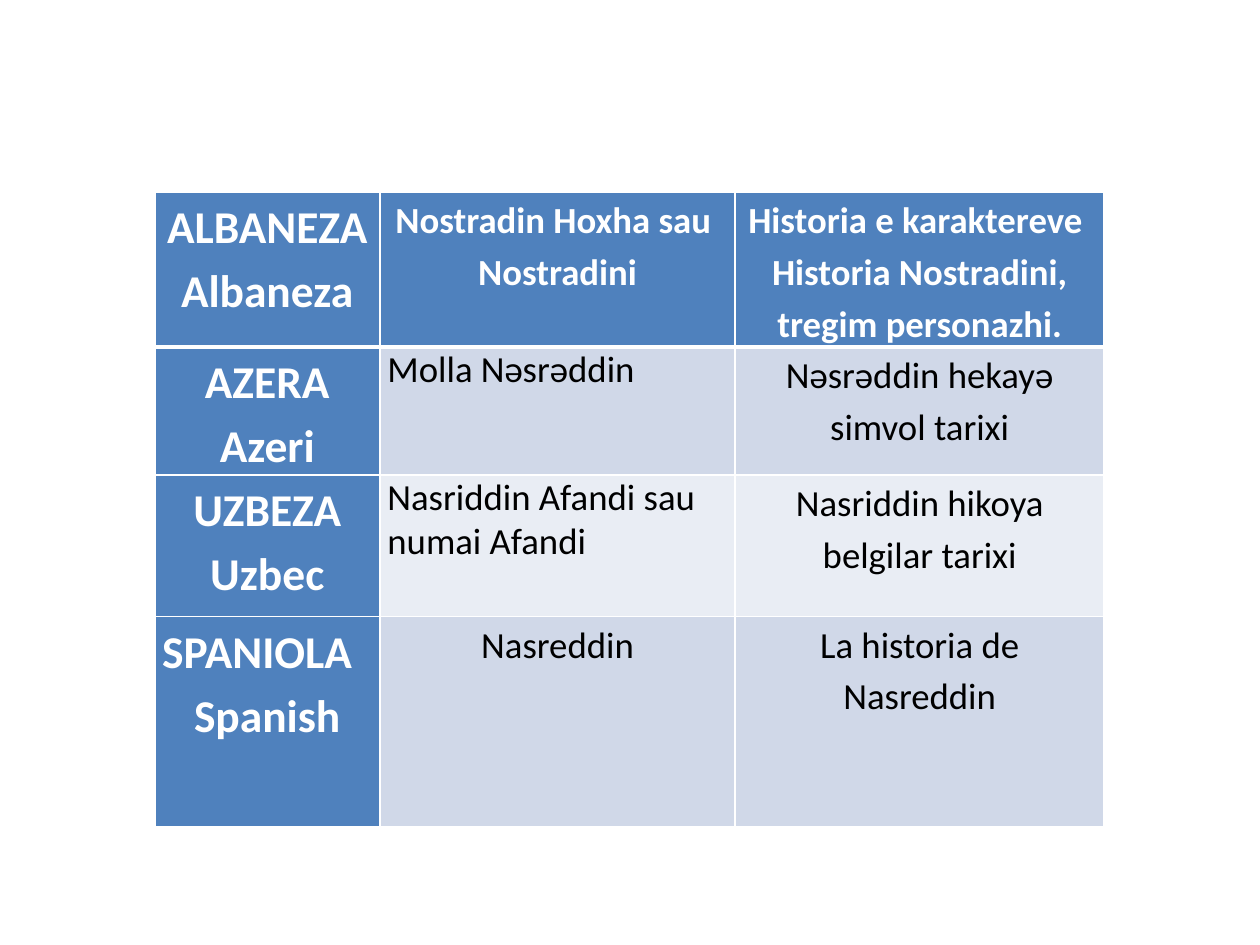
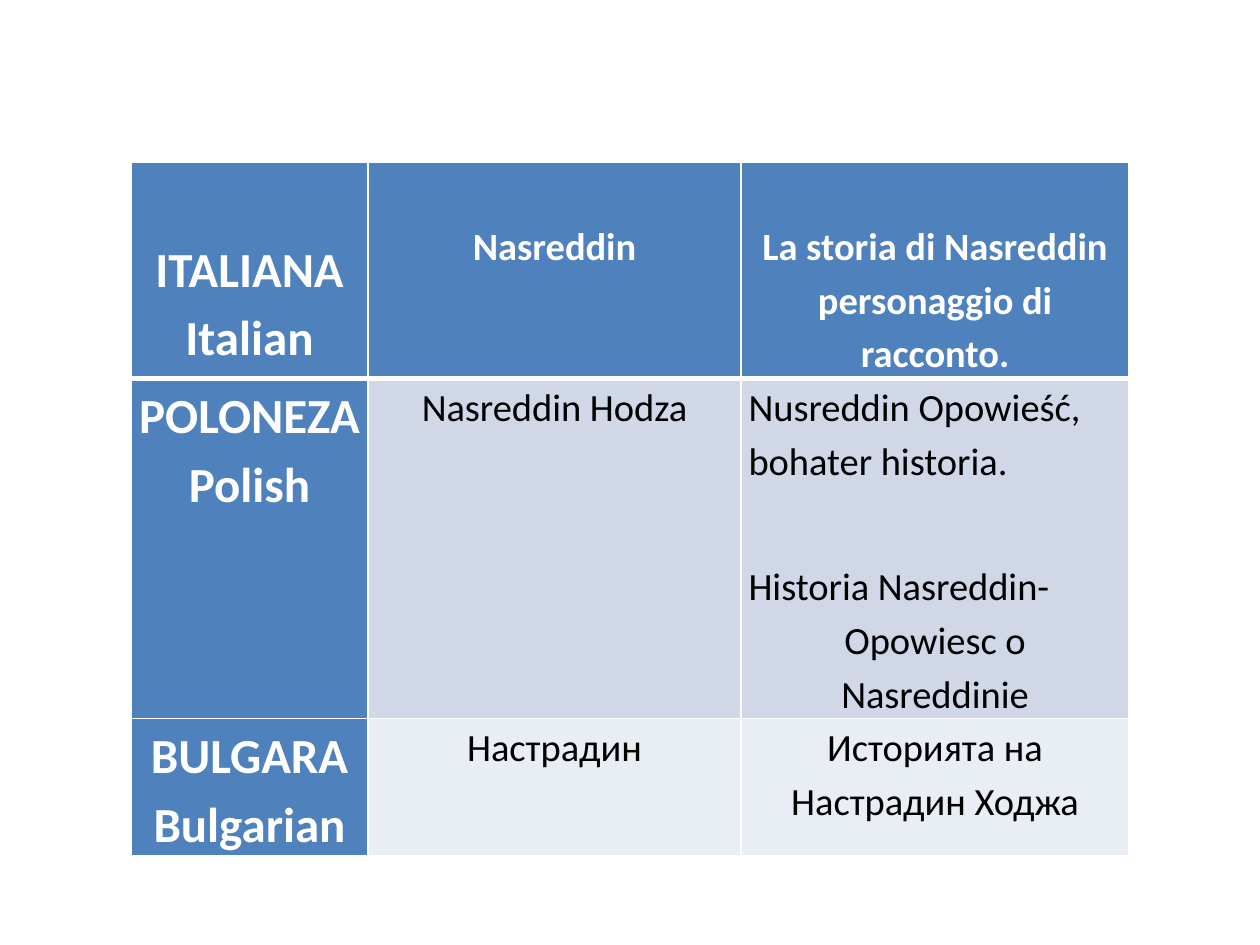
from lxml import etree
from pptx import Presentation
from pptx import util as u
from pptx.dml.color import RGBColor
from pptx.enum import text
from pptx.oxml.ns import qn

COLOURS = {"head": "4F81BD", "odd": "D0D8E8", "even": "E9EDF4",
           "light": "FFFFFF", "dark": "000000"}
FONT = "Calibri"
CENTRED = {"alignment": text.PP_ALIGN.CENTER, "line_spacing": 1.15}
LEFT = {"alignment": text.PP_ALIGN.LEFT, "line_spacing": 1.15}
TIGHT_LEFT = {"alignment": text.PP_ALIGN.LEFT, "line_spacing": 1.0}
AFTER_GAP = {**LEFT, "space_before": u.Pt(40.5)}

# A cell is a list of lines: plain text is centred, a pair brings its own format
BALKAN_TO_SPANISH = [
    [["ALBANEZA", "Albaneza"],
     ["Nostradin Hoxha sau ", "Nostradini"],
     ["Historia e karaktereve ", "Historia Nostradini, tregim personazhi."]],
    [["AZERA", "Azeri"],
     [("Molla Nəsrəddin", TIGHT_LEFT)],
     ["Nəsrəddin hekayə simvol tarixi"]],
    [["UZBEZA", "Uzbec"],
     [("Nasriddin Afandi sau numai Afandi", TIGHT_LEFT)],
     ["Nasriddin hikoya belgilar tarixi"]],
    [[("SPANIOLA", LEFT), "Spanish"],
     ["Nasreddin"],
     ["La historia de Nasreddin"]],
]
ITALIAN_TO_BULGARIAN = [
    [["ITALIANA", "Italian"],
     ["Nasreddin"],
     ["La storia di Nasreddin personaggio di racconto."]],
    [["POLONEZA", "Polish"],
     ["Nasreddin Hodza"],
     [("Nusreddin Opowieść, bohater historia.", LEFT),
      ("Historia Nasreddin-", AFTER_GAP),
      "Opowiesc o Nasreddinie"]],
    [["BULGARA", "Bulgarian"],
     ["Настрадин"],
     ["Историята на Настрадин Ходжа"]],
]


def apply(target, formats):
    for name, value in formats.items():
        setattr(target, name, value)


def colour(name):
    return RGBColor.from_string(COLOURS[name])


def add_borders(cell, widths):
    """Draw white cell borders; widths maps L, R, T, B to points."""
    properties = cell._tc.get_or_add_tcPr()
    for index, (side, points) in enumerate(widths.items()):
        line = etree.Element(qn(f"a:ln{side}"), w=str(u.Pt(points)))
        fill = etree.SubElement(line, qn("a:solidFill"))
        etree.SubElement(fill, qn("a:srgbClr"), val=COLOURS["light"])
        properties.insert(index, line)


def write_lines(cell, lines, size, strong):
    frame = cell.text_frame
    for index, line in enumerate(lines):
        words, formats = (line, CENTRED) if isinstance(line, str) else line
        paragraph = frame.add_paragraph() if index else frame.paragraphs[0]
        apply(paragraph, formats)
        run = paragraph.add_run()
        run.text = words
        apply(run.font, {"name": FONT, "size": u.Pt(size), "bold": strong})
        run.font.color.rgb = colour("light" if strong else "dark")


def add_names_table(slide, box, column_widths, row_heights, entries,
                    language_size, name_size, head_drop=0):
    """Languages in the first column, then the hero's name and the story title.

    head_drop is the space above the first row's text, in text lines.
    """
    left, top = box
    table = slide.shapes.add_table(
        len(entries), len(column_widths), u.Cm(left), u.Cm(top),
        u.Cm(sum(column_widths)), u.Cm(sum(row_heights))).table
    for column, width in zip(table.columns, column_widths):
        column.width = u.Cm(width)
    for row, height in zip(table.rows, row_heights):
        row.height = u.Cm(height)

    for r, row_entries in enumerate(entries):
        for c, lines in enumerate(row_entries):
            cell = table.cell(r, c)
            strong = r == 0 or c == 0
            size = language_size if c == 0 else name_size
            drop = u.Pt(round(head_drop * size * 1.22 * 1.15, 1)) if r == 0 else 0
            apply(cell, {"margin_left": u.Cm(0.15), "margin_right": u.Cm(0.15),
                         "margin_top": drop, "margin_bottom": 0})
            cell.fill.solid()
            cell.fill.fore_color.rgb = colour(
                "head" if strong else "odd" if r % 2 else "even")
            # The rule under the header row is heavier
            add_borders(cell, {"L": 1, "R": 1, "T": 3 if r == 1 else 1,
                               "B": 3 if r == 0 else 1})
            write_lines(cell, lines, size, strong)


def main():
    deck = Presentation()
    apply(deck, {"slide_width": u.Cm(25.4), "slide_height": u.Cm(19.05)})
    blank = deck.slide_layouts[6]

    # Albanian, Azeri, Uzbek, Spanish
    add_names_table(deck.slides.add_slide(blank), (3.12, 3.87),
                    [4.54, 7.16, 7.44], [3.1, 2.58, 2.85, 4.25],
                    BALKAN_TO_SPANISH, language_size=26, name_size=21)
    # Italian, Polish, Bulgarian
    add_names_table(deck.slides.add_slide(blank), (2.64, 3.28),
                    [4.78, 7.52, 7.82], [4.32, 6.85, 2.76],
                    ITALIAN_TO_BULGARIAN, language_size=28, name_size=22,
                    head_drop=1)
    deck.save("out.pptx")


if __name__ == "__main__":
    main()
